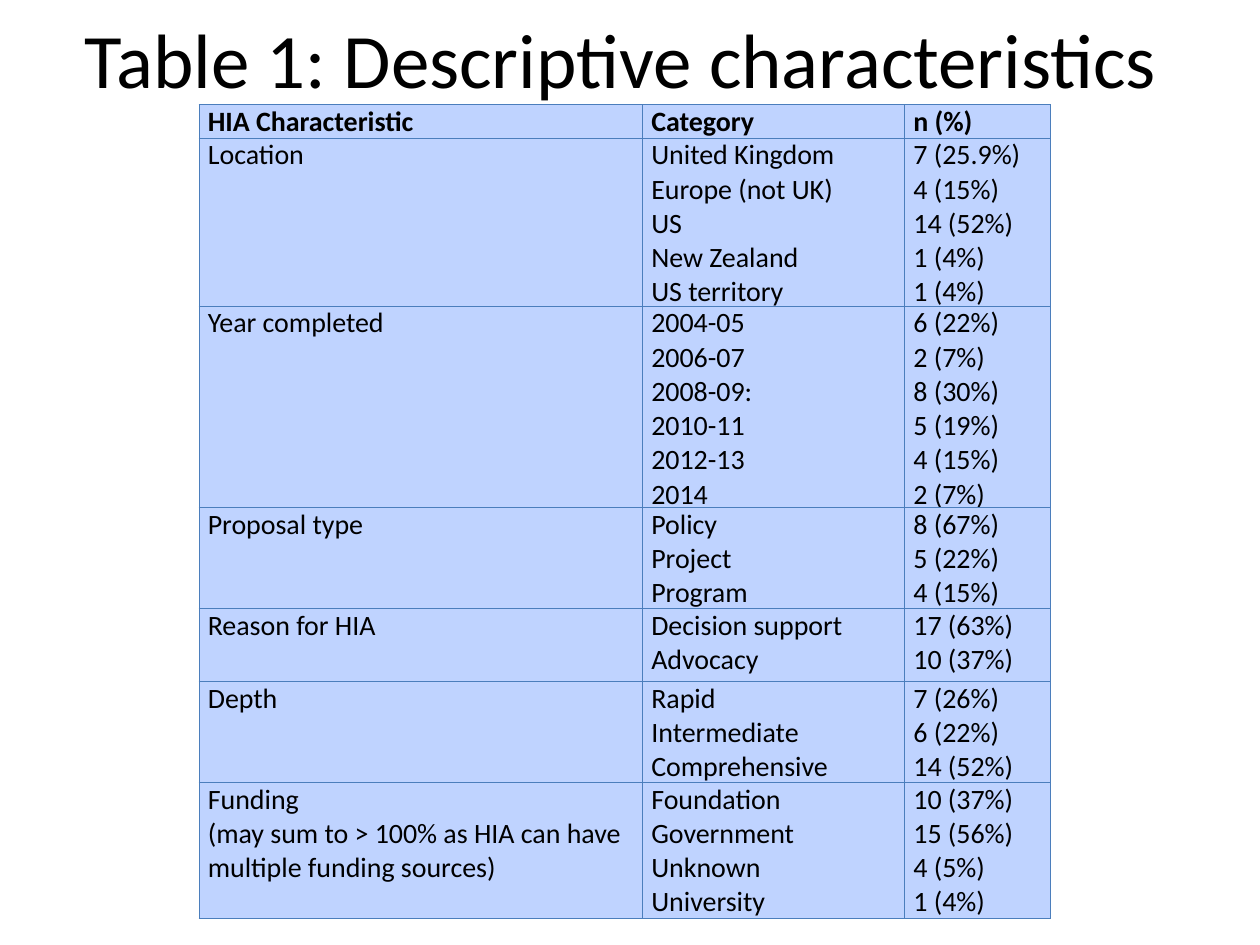
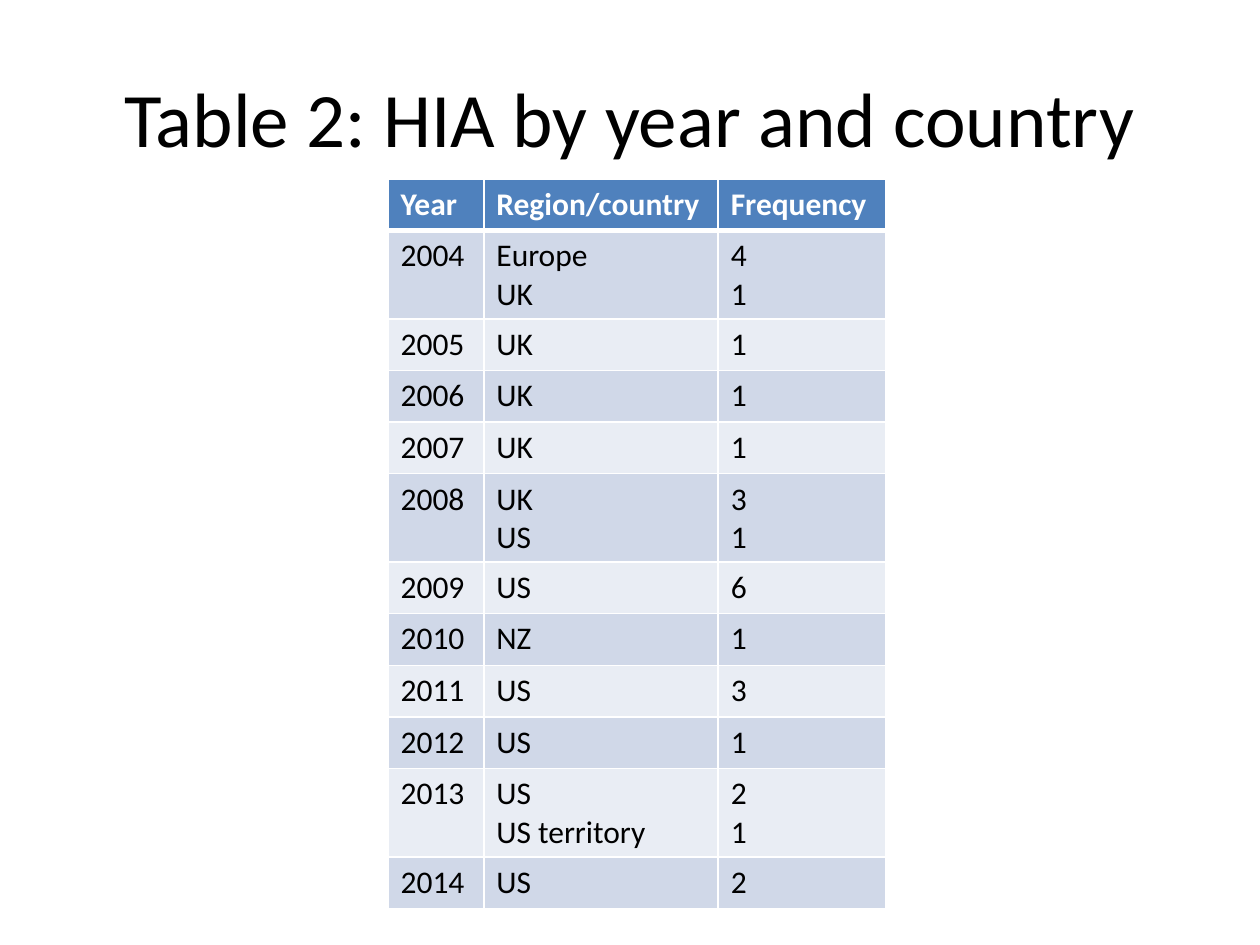
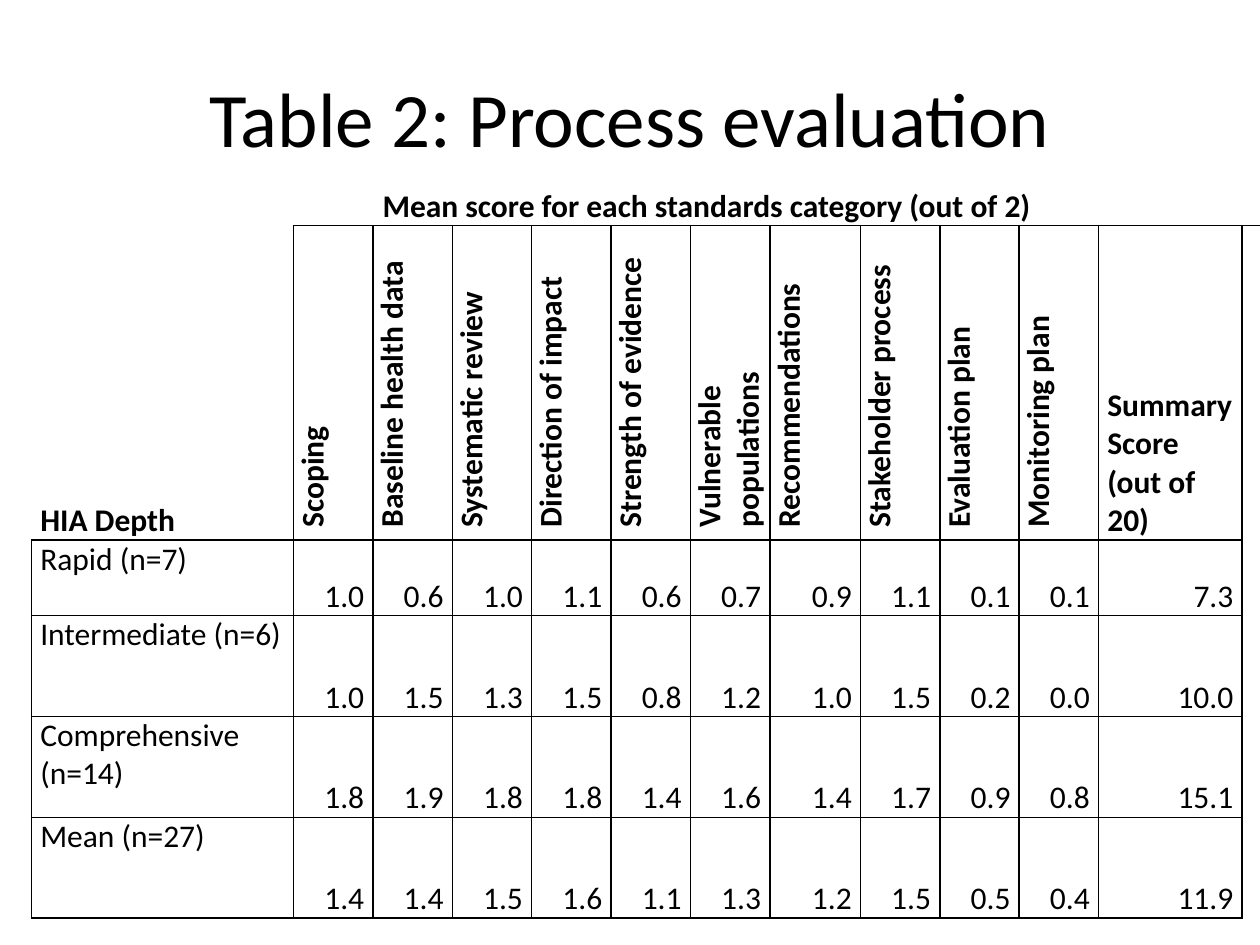
"""Build three slides of tables on health impact assessments (HIA)."""
import pptx
import pptx.dml.color
import pptx.enum.text
import pptx.oxml.ns
import pptx.util
from lxml import etree

Inches = pptx.util.Inches
Pt = pptx.util.Pt
ALIGN = pptx.enum.text.PP_ALIGN
ANCHOR = pptx.enum.text.MSO_ANCHOR
qn = pptx.oxml.ns.qn

PLAIN_TABLE = "{2D5ABB26-0587-4C30-8999-92F81FD0307C}"
BLACK, WHITE = "000000", "FFFFFF"
PALE_BLUE, EDGE_BLUE = "BFD3FF", "4B7EBC"
HEADER_BLUE, BANDS = "4F81BD", ("E9EDF4", "D0D8E8")
TIGHT = (0.07, 0)

CHARACTERISTICS = [
    ("HIA Characteristic", "Category", "n (%)"),
    ("Location",
     "United Kingdom\nEurope (not UK) \vUS\nNew Zealand\nUS territory",
     "7 (25.9%)\n4 (15%)\n14 (52%)\n1 (4%)\n1 (4%)"),
    ("Year completed",
     "2004-05\n2006-07\n2008-09:\n2010-11\n2012-13\n2014",
     "6 (22%)\n2 (7%)\n8 (30%)\n5 (19%)\n4 (15%)\n2 (7%)"),
    ("Proposal type", "Policy\nProject\nProgram", "8 (67%)\n5 (22%)\n4 (15%)"),
    ("Reason for HIA", "Decision support\nAdvocacy", "17 (63%)\n10 (37%)"),
    ("Depth", "Rapid\nIntermediate\nComprehensive",
     "7 (26%)\n6 (22%)\n14 (52%)"),
    ("Funding\n(may sum to > 100% as HIA can have multiple funding sources)",
     "Foundation\nGovernment\nUnknown\nUniversity",
     "10 (37%)\n15 (56%)\n4 (5%)\n1 (4%)"),
]

YEARS = [
    ("Year", "Region/country", "Frequency"),
    ("2004", "Europe\nUK", "4\v1"),
    ("2005", "UK", "1"),
    ("2006", "UK", "1"),
    ("2007", "UK", "1"),
    ("2008", "UK\nUS", "3\n1"),
    ("2009", "US", "6"),
    ("2010", "NZ", "1"),
    ("2011", "US", "3"),
    ("2012", "US", "1"),
    ("2013", "US\nUS territory", "2\n1"),
    ("2014", "US", "2"),
]

STANDARDS = [
    "Scoping", "Baseline health data", "Systematic review",
    "Direction of impact", "Strength of evidence", "Vulnerable populations",
    "Recommendations", "Stakeholder process", "Evaluation plan",
    "Monitoring plan",
]

SCORES = [
    ("Rapid (n=7)", "1.0", "0.6", "1.0", "1.1", "0.6", "0.7", "0.9", "1.1",
     "0.1", "0.1", "7.3"),
    ("Intermediate (n=6)", "1.0", "1.5", "1.3", "1.5", "0.8", "1.2", "1.0",
     "1.5", "0.2", "0.0", "10.0"),
    ("Comprehensive (n=14)", "1.8", "1.9", "1.8", "1.8", "1.4", "1.6", "1.4",
     "1.7", "0.9", "0.8", "15.1"),
    ("Mean (n=27)", "1.4", "1.4", "1.5", "1.6", "1.1", "1.3", "1.2", "1.5",
     "0.5", "0.4", "11.9"),
]


def rgb(value):
    """Return the colour for a hex string."""
    return pptx.dml.color.RGBColor.from_string(value)


class TableDeck:
    """Hold the deck, its style and the current page."""

    font = "Calibri"

    def __init__(self):
        """Start an empty 10 by 7.5 inch deck."""
        self.deck = pptx.Presentation()
        self.deck.slide_width = Inches(10)
        self.deck.slide_height = Inches(7.5)
        self.page = None

    def format_text(self, para, size, color=BLACK, bold=False):
        """Apply the deck font to every run of a paragraph."""
        for span in para.runs:
            span.font.name = self.font
            span.font.size = Pt(size)
            span.font.bold = bold
            span.font.color.rgb = rgb(color)

    def add_page(self, title, top=0.3):
        """Add a page with a centred title."""
        self.page = self.deck.slides.add_slide(self.deck.slide_layouts[6])
        box = self.page.shapes.add_textbox(
            Inches(0.5), Inches(top), Inches(9), Inches(1.25))
        frame = box.text_frame
        frame.word_wrap = True
        frame.vertical_anchor = ANCHOR.MIDDLE
        frame.text = title
        frame.paragraphs[0].alignment = ALIGN.CENTER
        self.format_text(frame.paragraphs[0], 44)

    def add_table(self, left, top, height, widths, heights):
        """Add a table without a banded style and return it."""
        frame = self.page.shapes.add_table(
            len(heights), len(widths), Inches(left), Inches(top),
            Inches(sum(widths)), Inches(height))
        table = frame.table
        table.first_row = table.horz_banding = False
        frame._element.find(".//" + qn("a:tableStyleId")).text = PLAIN_TABLE
        for column, width in zip(table.columns, widths):
            column.width = Inches(width)
        for row, row_height in zip(table.rows, heights):
            row.height = Inches(row_height)
        frame.height = Inches(height)
        return table

    def add_borders(self, cell, color, sides):
        """Draw the given sides of a cell, a mapping of L, R, T, B to points."""
        properties = cell._tc.get_or_add_tcPr()
        for side in "LRTB":
            if side in sides:
                line = etree.SubElement(
                    properties, qn("a:ln" + side), w=str(Pt(sides[side])))
                fill = etree.SubElement(line, qn("a:solidFill"))
                etree.SubElement(fill, qn("a:srgbClr"), val=color)

    def fill_cell(self, cell, text="", size=18, color=BLACK, bold=False,
                  fill=None, edge=BLACK, sides=None, insets=(0.1, 0.05),
                  anchor=ANCHOR.TOP, align=ALIGN.LEFT, after=0):
        """Write and style one table cell."""
        self.add_borders(cell, edge, sides or {})
        if fill:
            cell.fill.solid()
            cell.fill.fore_color.rgb = rgb(fill)
        else:
            cell.fill.background()
        cell.margin_left = cell.margin_right = Inches(insets[0])
        cell.margin_top = cell.margin_bottom = Inches(insets[1])
        cell.vertical_anchor = anchor
        cell.text_frame.text = text
        for para in cell.text_frame.paragraphs:
            para.alignment = align
            para.space_after = Pt(after)
            self.format_text(para, size, color, bold)

    def turn_cell(self, cell, indent):
        """Turn the text of a cell upwards, with an indent in inches."""
        cell._tc.get_or_add_tcPr().set("vert", "vert270")
        for para in cell.text_frame.paragraphs:
            para._p.get_or_add_pPr().set("marL", str(Inches(indent)))


def box_sides(width):
    """Return all four sides of a cell at one line width."""
    return dict.fromkeys("LRTB", width)


def add_characteristics(pages):
    """Add the page of descriptive characteristics."""
    pages.add_page("Table 1: Descriptive characteristics ", -0.17)
    table = pages.add_table(1.58, 0.83, 6.47, [3.52, 2.08, 1.16],
                            [0.25, 1.17, 1.42, 0.75, 0.58, 0.75, 1.08])
    for row, texts in enumerate(CHARACTERISTICS):
        for column, text in enumerate(texts):
            pages.fill_cell(table.cell(row, column), text, 16, bold=row == 0,
                            fill=PALE_BLUE, edge=EDGE_BLUE,
                            sides=box_sides(0.75), insets=TIGHT)


def add_years(pages):
    """Add the page of frequencies by year and country."""
    pages.add_page("Table 2: HIA by year and country")
    table = pages.add_table(3.08, 1.42, 5.75, [0.76, 1.86, 1.33],
                            [0.41] * len(YEARS))
    for row, texts in enumerate(YEARS):
        header = row == 0
        sides = box_sides(1)
        if header:
            sides["B"] = 3
        elif row == 1:
            sides["T"] = 3
        for column, text in enumerate(texts):
            pages.fill_cell(table.cell(row, column), text, bold=header,
                            color=WHITE if header else BLACK,
                            fill=HEADER_BLUE if header else BANDS[row % 2],
                            edge=WHITE, sides=sides)


def add_scores(pages):
    """Add the page of mean process scores."""
    pages.add_page("Table 2: Process evaluation")
    widths = [2.08] + [0.63] * 6 + [0.72] + [0.63] * 3 + [0.17, 0.97, 0.17]
    table = pages.add_table(0.25, 1.49, 5.7, widths,
                            [0.28, 2.4, 0.6, 0.8, 0.8, 0.8])
    summary, margin = 11, 13
    table.cell(0, 1).merge(table.cell(0, summary))
    table.cell(0, 12).merge(table.cell(0, margin))
    low = {"insets": TIGHT, "anchor": ANCHOR.BOTTOM}
    grid = box_sides(1)

    pages.fill_cell(table.cell(0, 0), insets=TIGHT)
    pages.fill_cell(table.cell(0, 1),
                    "Mean score for each standards category (out of 2)",
                    bold=True, sides={"B": 1}, align=ALIGN.CENTER, **low)
    pages.fill_cell(table.cell(0, 12), sides={"B": 1}, insets=TIGHT)

    for row in range(1, len(table.rows)):
        table.cell(row, summary).merge(table.cell(row, 12))
        pages.fill_cell(table.cell(row, margin), sides={"L": 1}, insets=TIGHT)

    pages.fill_cell(table.cell(1, 0), "HIA Depth", bold=True,
                    sides={"R": 1, "B": 1}, after=10, **low)
    for column, standard in enumerate(STANDARDS, 1):
        cell = table.cell(1, column)
        pages.fill_cell(cell, standard, bold=True, sides=grid,
                        insets=(0.02, 0), anchor=ANCHOR.MIDDLE)
        pages.turn_cell(cell, 0.08)
    pages.fill_cell(table.cell(1, summary), "Summary Score (out of 20)",
                    bold=True, sides=grid, after=10, **low)

    for row, (depth, *scores) in enumerate(SCORES, 2):
        pages.fill_cell(table.cell(row, 0), depth, sides=grid, insets=TIGHT)
        for column, score in enumerate(scores, 1):
            pages.fill_cell(table.cell(row, column), score, sides=grid,
                            align=ALIGN.RIGHT, **low)


def main():
    """Build and save the deck."""
    pages = TableDeck()
    add_characteristics(pages)
    add_years(pages)
    add_scores(pages)
    pages.deck.save("out.pptx")


if __name__ == "__main__":
    main()
